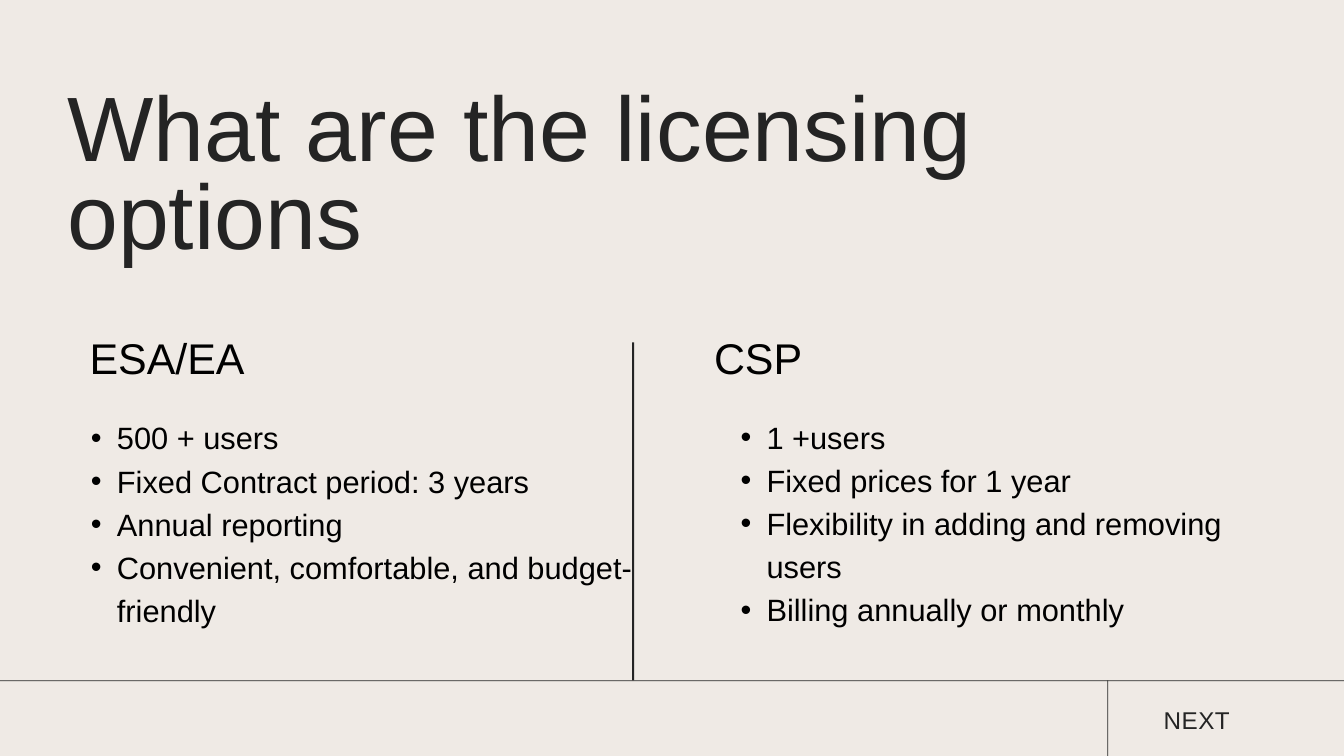
import pptx
import pptx.util
import pptx.dml.color
import pptx.enum.shapes
import pptx.enum.text
import pptx.oxml
import pptx.oxml.ns

EMU_PER_PX = 9525  # 96 px to the inch
COLORS = {"background": "EFEAE5", "dark": "242424", "black": "000000"}
COMPARISON_LAYOUT = 4
ALIGN = pptx.enum.text.PP_ALIGN

# Text styles: point sizes and colours
TITLE = {"size": 98, "leading": 94.1, "color": "dark"}
HEADING = {"size": 46, "leading": 64.4, "color": "black"}
LIST = {"size": 33, "leading": 46.2, "color": "black"}
BUTTON = {"size": 26, "leading": 36.4, "color": "dark"}

# Placeholder index, box in px, style, lines, bulleted
TEXTS = [
    (0, (96, 131, 1636, 258), TITLE, ["What are the licensing options"], False),
    (1, (128, 462, 368, 82), HEADING, ["ESA/EA"], False),
    (2, (92, 590, 822, 304), LIST,
     ["500 + users", "Fixed Contract period: 3 years", "Annual reporting",
      "Convenient, comfortable, and budget-friendly"], True),
    (3, (1020, 462, 254, 77), HEADING, ["CSP"], False),
    (4, (1020, 589, 822, 304), LIST,
     ["1 +users", "Fixed prices for 1 year",
      "Flexibility in adding and removing users",
      "Billing annually or monthly"], True),
]

# Footer line, button divider, column divider
RULES = [(0, 972, 1920, 1), (1582, 972, 1, 108), (903, 489, 3, 483)]


def px(value):
    return pptx.util.Emu(value * EMU_PER_PX)


def rgb(name):
    return pptx.dml.color.RGBColor.from_string(COLORS[name])


def set_attributes(target, values):
    for name, value in values.items():
        setattr(target, name, value)


def add_bullet(paragraph):
    paragraph.level = 1
    properties = paragraph._p.get_or_add_pPr()
    properties.set("marL", str(px(75)))
    properties.set("indent", str(px(-37)))
    bullet = pptx.oxml.parse_xml(
        '<a:buChar %s char="•"/>' % pptx.oxml.ns.nsdecls("a"))
    properties.append(bullet)


def remove_indent(paragraph):
    properties = paragraph._p.get_or_add_pPr()
    properties.set("marL", "0")
    properties.set("indent", "0")
    properties.append(
        pptx.oxml.parse_xml("<a:buNone %s/>" % pptx.oxml.ns.nsdecls("a")))


def write_text(shape, box, style, lines, bulleted=False, align=ALIGN.LEFT):
    """Place a text shape and fill it with one paragraph per line."""
    set_attributes(shape, dict(zip(("left", "top", "width", "height"),
                                   map(px, box))))
    frame = shape.text_frame
    set_attributes(frame, {
        "margin_left": 0, "margin_top": 0,
        "margin_right": 0, "margin_bottom": 0,
        "word_wrap": True,
        "auto_size": pptx.enum.text.MSO_AUTO_SIZE.NONE,
        "vertical_anchor": pptx.enum.text.MSO_ANCHOR.TOP,
    })
    for number, line in enumerate(lines):
        paragraph = frame.add_paragraph() if number else frame.paragraphs[0]
        if bulleted:
            add_bullet(paragraph)
        else:
            remove_indent(paragraph)
        set_attributes(paragraph, {
            "alignment": align,
            "line_spacing": pptx.util.Pt(style["leading"]),
            "space_before": pptx.util.Pt(0),
            "space_after": pptx.util.Pt(0),
        })
        run = paragraph.add_run()
        run.text = line
        set_attributes(run.font, {
            "name": "Arial", "size": pptx.util.Pt(style["size"]),
            "bold": False})
        run.font.color.rgb = rgb(style["color"])


def add_rule(slide, box):
    rule = slide.shapes.add_shape(
        pptx.enum.shapes.MSO_SHAPE.RECTANGLE, *map(px, box))
    rule.shadow.inherit = False
    rule.fill.solid()
    rule.fill.fore_color.rgb = rgb("dark")
    rule.line.fill.background()


def add_button(slide, box, label):
    shape = slide.shapes.add_textbox(*map(px, box))
    write_text(shape, box, BUTTON, [label], align=ALIGN.RIGHT)
    run = shape.text_frame.paragraphs[0].runs[0]
    run._r.get_or_add_rPr().set("spc", "50")


def main():
    presentation = pptx.Presentation()
    set_attributes(presentation, {"slide_width": px(1920),
                                  "slide_height": px(1080)})
    slide = presentation.slides.add_slide(
        presentation.slide_layouts[COMPARISON_LAYOUT])
    slide.background.fill.solid()
    slide.background.fill.fore_color.rgb = rgb("background")

    # Title, column headings and lists
    placeholders = {shape.placeholder_format.idx: shape
                    for shape in slide.placeholders}
    for index, box, style, lines, bulleted in TEXTS:
        write_text(placeholders[index], box, style, lines, bulleted)

    # Dividers and footer
    for box in RULES:
        add_rule(slide, box)
    add_button(slide, (1629, 1001, 128, 46), "NEXT")

    presentation.save("out.pptx")


if __name__ == "__main__":
    main()
